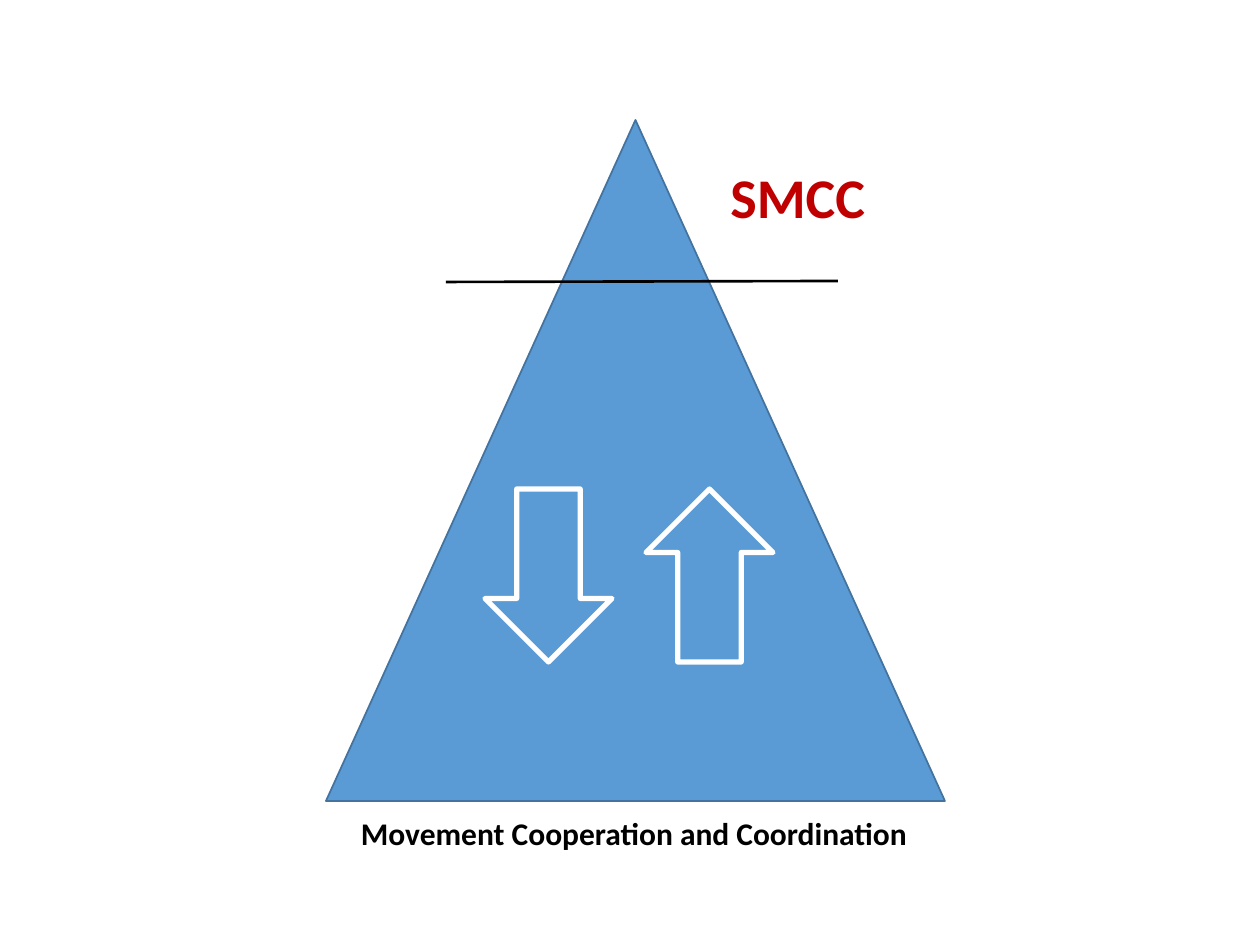
from pptx import Presentation
from pptx.dml.color import RGBColor
from pptx.enum.shapes import MSO_CONNECTOR as Connector, MSO_SHAPE as Shape
from pptx.enum.text import MSO_AUTO_SIZE as AutoSize, PP_ALIGN as Align
from pptx.oxml.ns import qn
from pptx.util import Pt
from lxml import etree

PX = 914400 // 126
BLUE = RGBColor(0x5B, 0x9B, 0xD5)
DARK_BLUE = RGBColor(0x43, 0x73, 0x9E)
RED = RGBColor(0xC0, 0x00, 0x00)
BLACK = RGBColor(0x00, 0x00, 0x00)
WHITE = RGBColor(0xFF, 0xFF, 0xFF)

deck = Presentation()
deck.slide_width = 1260 * PX
deck.slide_height = 945 * PX
page = deck.slides.add_slide(deck.slide_layouts[6])


def add_shape(kind, left, top, width, height, line, weight):
    shape = page.shapes.add_shape(kind, left * PX, top * PX, width * PX, height * PX)
    shape.shadow.inherit = False
    shape.fill.solid()
    shape.fill.fore_color.rgb = BLUE
    shape.line.color.rgb = line
    shape.line.width = Pt(weight)
    return shape


def add_text(text, *, left, top, width, height, size, color, align=Align.LEFT):
    box = page.shapes.add_textbox(left * PX, top * PX, width * PX, height * PX)
    box.text_frame.word_wrap = True
    box.text_frame.auto_size = AutoSize.SHAPE_TO_FIT_TEXT
    para = box.text_frame.paragraphs[0]
    para.alignment = align
    span = para.add_run()
    span.text = text
    span.font.name = "Calibri"
    span.font.size = Pt(size)
    span.font.bold = True
    span.font.color.rgb = color


# Pyramid and its caption
add_shape(Shape.ISOSCELES_TRIANGLE, 326, 120, 619, 681, DARK_BLUE, 1)
add_text("Movement Cooperation and Coordination", left=300, top=808, width=668,
         height=50, size=18, color=BLACK, align=Align.CENTER)

# Line that sets off the top of the pyramid
divider = page.shapes.add_connector(
    Connector.STRAIGHT, 446 * PX, 282 * PX, 838 * PX, 281 * PX)
divider.line.color.rgb = BLACK
divider.line.width = Pt(1.5)
etree.SubElement(divider.element.spPr, qn("a:effectLst"))
add_text("SMCC", left=718, top=156, width=392, height=81, size=32, color=RED)

# Downward and upward arrows
for left, rotation in ((485, 0), (646, 180)):
    arrow = add_shape(Shape.DOWN_ARROW, left, 489, 127, 173, WHITE, 3)
    arrow.rotation = rotation

deck.save("out.pptx")
